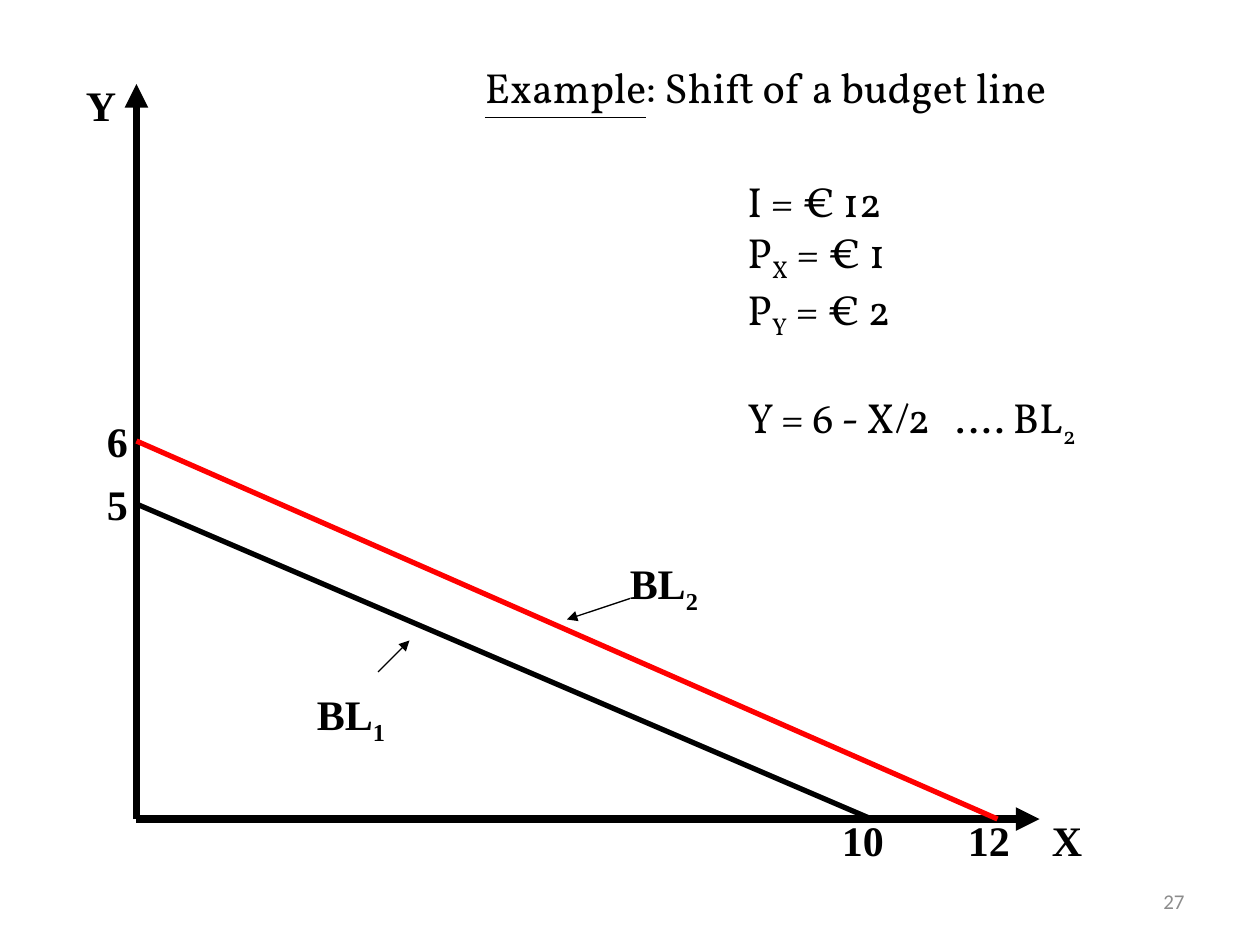
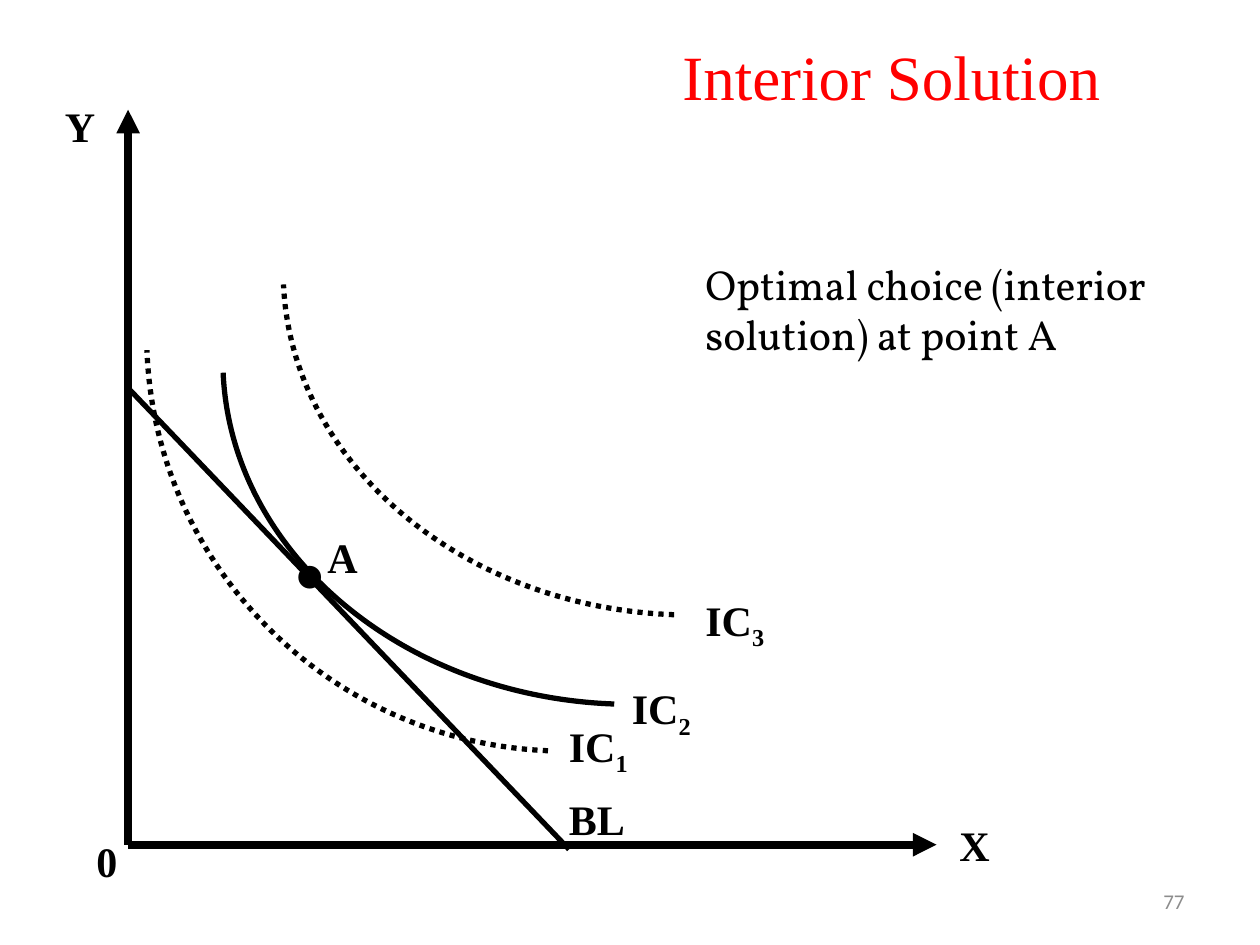
from copy import deepcopy

from lxml import etree
from pptx import Presentation
from pptx import util as u
from pptx.dml.color import RGBColor
from pptx.enum import dml, shapes, text
from pptx.oxml.ns import qn

BLACK = RGBColor(0, 0, 0)
RED = RGBColor(255, 0, 0)
GREY = RGBColor(0x8C, 0x8C, 0x8C)

# Grid of 120 columns by 90 rows; each cell is a twelfth of an inch
CELL = u.Inches(10) // 120

LABEL = {"name": "Times New Roman", "size": u.Pt(24), "bold": True}
BODY = {"name": "Vollkorn", "size": u.Pt(24)}
TITLE = {"name": "Times New Roman", "size": u.Pt(36)}
POINT = LABEL | {"size": u.Pt(48)}
NUMBER = {"name": "Calibri", "size": u.Pt(12)}
SUBSCRIPT = {"baseline": "-25000"}
UNDERLINE = {"u": "sng"}

AXIS, CURVE, POINTER = 4.5, 3, 0.75


def add_text(slide, lines, box, style, color=BLACK, wrap=False, align=None, mark=SUBSCRIPT):
    """Write lines in a box given in grid cells; parts between underscores get the mark."""
    shape = slide.shapes.add_textbox(*(round(length * CELL) for length in box))
    frame = shape.text_frame
    frame.word_wrap = wrap
    if align is None:
        frame.auto_size = text.MSO_AUTO_SIZE.SHAPE_TO_FIT_TEXT
    for index, line in enumerate(lines.split("\n")):
        paragraph = frame.add_paragraph() if index else frame.paragraphs[0]
        paragraph.alignment = align
        for position, part in enumerate(line.split("_")):
            if not part:
                continue
            run = paragraph.add_run()
            run.text = part
            for name, value in style.items():
                setattr(run.font, name, value)
            run.font.color.rgb = color
            if position % 2:
                for name, value in mark.items():
                    run.font._element.set(name, value)
    return frame


def add_line(slide, start, end, width, color=BLACK, arrow=False):
    ends = (round(length * CELL) for length in (*start, *end))
    connector = slide.shapes.add_connector(shapes.MSO_CONNECTOR.STRAIGHT, *ends)
    connector.line.color.rgb = color
    connector.line.width = u.Pt(width)
    properties = connector._element.spPr
    if arrow:
        etree.SubElement(properties.find(qn("a:ln")), qn("a:tailEnd"), type="triangle")
    etree.SubElement(properties, qn("a:effectLst"))


presentation = Presentation()
presentation.slide_width = 120 * CELL
presentation.slide_height = 90 * CELL
blank = presentation.slide_layouts[6]

# Shared frame of both diagrams: page number, axes and axis names
diagrams = [
    # page, origin, end of X axis, end of Y axis, X name, Y name
    ("27", (13, 78), 99, 8, (99, 77), (7, 7)),
    ("77", (12.2, 80.45), 89.2, 10.45, (90.2, 77.45), (5, 9)),
]
slides = []
for page, origin, x_end, y_end, x_name, y_name in diagrams:
    slide = presentation.slides.add_slide(blank)
    frame = add_text(slide, page, (86, 83.4, 28, 4.8), NUMBER, GREY, True, text.PP_ALIGN.RIGHT)
    frame.vertical_anchor = text.MSO_ANCHOR.MIDDLE
    add_line(slide, origin, (x_end, origin[1]), AXIS, arrow=True)
    add_line(slide, origin, (origin[0], y_end), AXIS, arrow=True)
    add_text(slide, "Y", (*y_name, 5.25, 6), LABEL)
    add_text(slide, "X", (*x_name, 5.25, 6), LABEL)
    slides.append(slide)
shift_slide, interior_slide = slides

# Shift of a budget line
add_line(shift_slide, (13, 48), (83, 78), CURVE)
add_line(shift_slide, (36, 64), (39, 61), POINTER, arrow=True)
add_line(shift_slide, (13, 42), (95, 78), CURVE, RED)
add_line(shift_slide, (60, 57), (54, 59), POINTER, arrow=True)
for label, left, top, width in [
    ("10", 79, 77, 6.4), ("5", 9, 45, 4.4), ("6", 9, 39, 4.4), ("12", 91, 77, 6.4),
    ("BL_2_", 58.8, 52.55, 9.1), ("BL_1_", 29, 65, 9.1),
]:
    add_text(shift_slide, label, (left, top, width, 6), LABEL)
equations = add_text(
    shift_slide, "I = € 12\nP_X_ = € 1\nP_Y_ = € 2\nY = 6 - X/2\t…. BL_2_",
    (70, 16.15, 37, 25.2), BODY)
budget_equation = equations.paragraphs[-1]
budget_equation.space_before = u.Pt(29)
tabs = etree.SubElement(budget_equation._p.get_or_add_pPr(), qn("a:tabLst"))
etree.SubElement(tabs, qn("a:tab"), pos=str(round(19.8 * CELL)), algn="l")
add_text(shift_slide, "_Example_: Shift of a budget line", (45, 5.25, 56.8, 6), BODY,
         wrap=True, mark=UNDERLINE)

# Interior solution
add_line(interior_slide, (12.2, 36.95), (54.2, 80.9), CURVE)

# Indifference curves share one Bezier form, as shares of width and height
BEZIER = [(0, 0), (0.545, 0.023), (0.98, 0.46), (1, 1)]
for start, end, corner, dash in [
    ((58.5, 67.05), (21.25, 35.5), (60.1, 34.4), None),
    ((52.2, 71.5), (14, 33.35), (53.8, 32), dml.MSO_LINE.ROUND_DOT),
    ((64.2, 58.55), (27, 27.1), (65.8, 26), dml.MSO_LINE.ROUND_DOT),
]:
    points = [tuple(round(CELL * (a + (b - a) * share))
                    for a, b, share in zip(start, end, control)) for control in BEZIER]
    points.append(tuple(round(CELL * length) for length in corner))
    builder = interior_slide.shapes.build_freeform(*points[0], scale=1.0)
    builder.add_line_segments(points[1:], close=True)
    curve = builder.convert_to_shape()
    curve.shadow.inherit = False
    curve.fill.background()
    curve.line.color.rgb = BLACK
    curve.line.width = u.Pt(CURVE)
    if dash:
        curve.line.dash_style = dash

    # Bend the first three segments into one Bezier; stroke only that arc
    sector = curve._element.find(".//" + qn("a:path"))
    bend = etree.Element(qn("a:cubicBezTo"))
    for segment in sector.findall(qn("a:lnTo"))[:3]:
        bend.append(segment[0])
        sector.remove(segment)
    sector.insert(1, bend)
    arc = deepcopy(sector)
    for closing in arc[2:]:
        arc.remove(closing)
    arc.set("fill", "none")
    sector.set("stroke", "0")
    sector.addprevious(arc)

add_text(interior_slide, "•", (27, 49.1, 5.2, 10.8), POINT)
add_text(interior_slide, "Optimal choice (interior solution) at point A", (66, 24, 47, 10.8),
         BODY, wrap=True)
for label, left, top, width in [
    ("IC_2_", 59, 64.45, 8.2), ("BL", 53, 75, 7.8), ("0", 8, 79, 4.4),
    ("IC_1_", 53, 68, 8.2), ("IC_3_", 66, 56, 8.2), ("A", 30, 50, 5.3),
]:
    add_text(interior_slide, label, (left, top, width, 6), LABEL)
add_text(interior_slide, "Interior Solution", (57, 3, 55.8, 10), TITLE, RED,
         align=text.PP_ALIGN.CENTER)

presentation.save("out.pptx")
